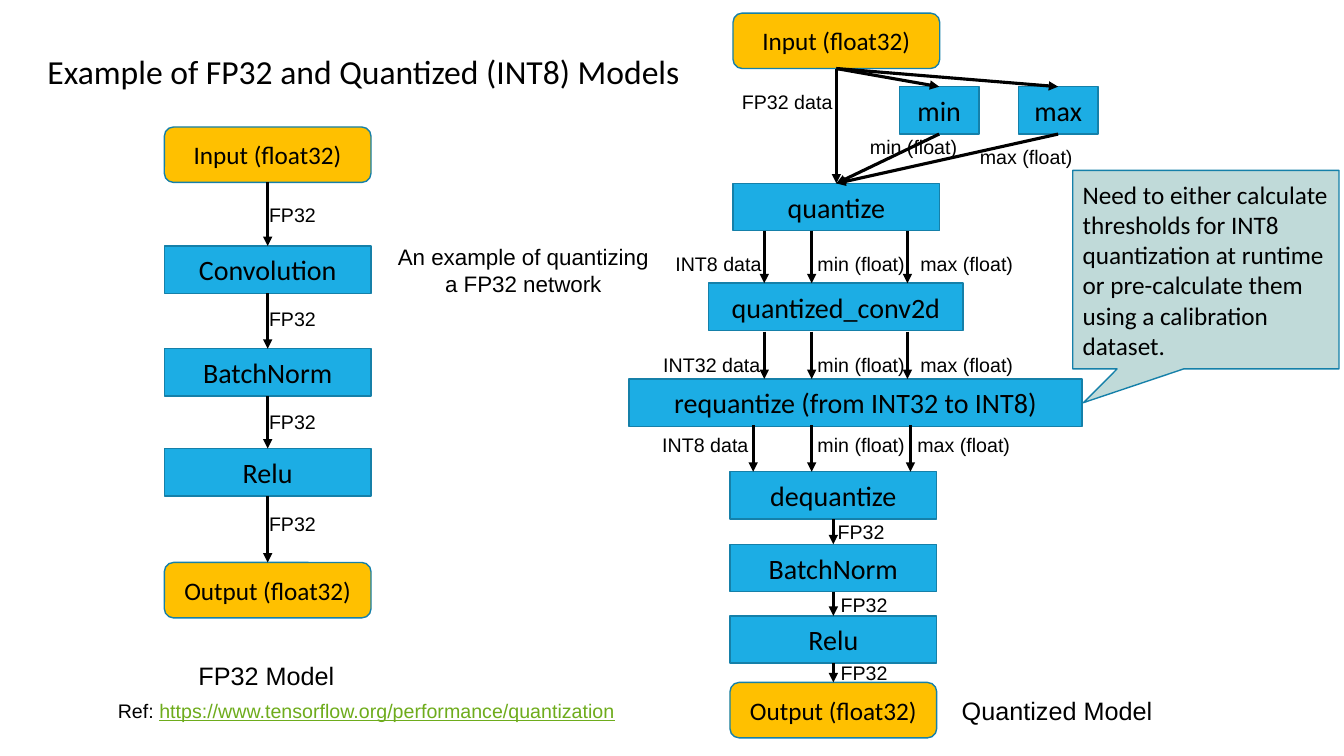
"""Build a slide comparing an FP32 model with its quantized INT8 version."""
import itertools

import pptx
import pptx.dml.color
import pptx.enum.shapes
import pptx.enum.text
import pptx.oxml
import pptx.oxml.ns
import pptx.util

Inches = pptx.util.Inches
RGBColor = pptx.dml.color.RGBColor
Shape = pptx.enum.shapes.MSO_SHAPE
Align = pptx.enum.text.PP_ALIGN
Anchor = pptx.enum.text.MSO_ANCHOR
AutoSize = pptx.enum.text.MSO_AUTO_SIZE

BLACK = RGBColor(0x00, 0x00, 0x00)
BLUE = RGBColor(0x1C, 0xAD, 0xE4)
AMBER = RGBColor(0xFF, 0xC0, 0x00)
TEAL = RGBColor(0xC0, 0xDA, 0xD9)
OUTLINE = RGBColor(0x15, 0x80, 0xA9)
LINK = RGBColor(0x6E, 0xAC, 0x1C)
TOP, BOTTOM = 0, 2


class Diagram:
    def __init__(self, slide):
        self.slide = slide
        self.shapes = slide.shapes

    def style(self, frame, size, font, align):
        for paragraph in frame.paragraphs:
            paragraph.alignment = align
            for run in paragraph.runs:
                run.font.size = pptx.util.Pt(size)
                run.font.name = font
                run.font.color.rgb = BLACK

    def title(self, text, left, top, width, height):
        title = self.shapes.title
        title.left, title.top = Inches(left), Inches(top)
        title.width, title.height = Inches(width), Inches(height)
        frame = title.text_frame
        frame.text = text
        frame.auto_size = AutoSize.NONE
        frame.vertical_anchor = Anchor.MIDDLE
        frame.paragraphs[0].line_spacing = 0.9
        self.style(frame, 24, "Calibri", Align.LEFT)

    def block(self, kind, text, left, top, width, height, fill, size, align=Align.CENTER):
        block = self.shapes.add_shape(
            kind, Inches(left), Inches(top), Inches(width), Inches(height))
        block.shadow.inherit = False
        block.fill.solid()
        block.fill.fore_color.rgb = fill
        block.line.color.rgb = OUTLINE
        block.line.width = pptx.util.Pt(1)
        frame = block.text_frame
        frame.text = text
        frame.word_wrap = True
        frame.vertical_anchor = Anchor.MIDDLE
        self.style(frame, size, "Calibri", align)
        return block

    def operation(self, text, left, top, width=2.05):
        return self.block(Shape.RECTANGLE, text, left, top, width, 0.47, BLUE, 20)

    def terminal(self, text, left, top):
        return self.block(Shape.ROUNDED_RECTANGLE, text, left, top, 2.05, 0.55, AMBER, 18)

    def callout(self, text, left, top, width, height, tip):
        callout = self.block(Shape.RECTANGULAR_CALLOUT, text, left, top, width, height,
                             TEAL, 18, Align.LEFT)
        callout.adjustments[0], callout.adjustments[1] = tip

    def arrow(self, x1=0, y1=0, x2=0, y2=0):
        arrow = self.shapes.add_connector(
            pptx.enum.shapes.MSO_CONNECTOR.STRAIGHT,
            Inches(x1), Inches(y1), Inches(x2), Inches(y2))
        arrow.line.color.rgb = BLACK
        arrow.line.width = pptx.util.Pt(2.25)
        line = arrow.line._get_or_add_ln()
        line.append(pptx.oxml.parse_xml(
            f'<a:tailEnd {pptx.oxml.ns.nsdecls("a")} type="triangle"/>'))
        arrow._element.spPr.append(pptx.oxml.parse_xml(
            f'<a:effectLst {pptx.oxml.ns.nsdecls("a")}/>'))
        return arrow

    def join(self, source, target):
        arrow = self.arrow()
        arrow.begin_connect(source, BOTTOM)
        arrow.end_connect(target, TOP)

    def chain(self, blocks):
        for source, target in itertools.pairwise(blocks):
            self.join(source, target)

    def label(self, text, left, top, width, height=0.34, size=14, wrap=False, align=Align.LEFT):
        label = self.shapes.add_textbox(
            Inches(left), Inches(top), Inches(width), Inches(height))
        frame = label.text_frame
        frame.text = text
        frame.word_wrap = wrap
        frame.auto_size = AutoSize.SHAPE_TO_FIT_TEXT
        self.style(frame, size, "Arial", align)
        return frame

    def reference(self, lead, address, left, top, width):
        frame = self.label(lead, left, top, width, wrap=True)
        run = frame.paragraphs[0].add_run()
        run.text = address
        self.style(frame, 14, "Arial", Align.LEFT)
        run.font.color.rgb = LINK
        run.font.underline = True


def draw_fp32_model(diagram):
    left = 1.63
    diagram.chain([
        diagram.terminal("Input (float32)", left, 1.26),
        diagram.operation("Convolution", left, 2.44),
        diagram.operation("BatchNorm", left, 3.46),
        diagram.operation("Relu", left, 4.45),
        diagram.terminal("Output (float32)", left, 5.58),
    ])
    for top in (1.96, 3, 4.02, 5.03):
        diagram.label("FP32", 2.57, top, 0.67)
    diagram.label("FP32 Model", 1.87, 6.5, 1.56, 0.4, 18)


def draw_quantized_model(diagram):
    source = diagram.terminal("Input (float32)", 7.27, 0.13)
    minimum = diagram.operation("min", 8.92, 0.86, 0.79)
    maximum = diagram.operation("max", 10.1, 0.86, 0.79)
    quantize = diagram.operation("quantize", 7.27, 1.82)
    diagram.operation("quantized_conv2d", 7.03, 2.81, 2.52)
    diagram.operation("requantize (from INT32 to INT8)", 6.24, 3.76, 4.49)

    diagram.chain([source, quantize])
    for extreme in (minimum, maximum):
        diagram.chain([source, extreme, quantize])
    diagram.chain([
        diagram.operation("dequantize", 7.24, 4.68),
        diagram.operation("BatchNorm", 7.24, 5.4),
        diagram.operation("Relu", 7.24, 6.11),
        diagram.terminal("Output (float32)", 7.24, 6.77),
    ])

    stages = [
        (2.29, 2.81, (7.58, 8.05, 9), "INT8 data", 6.6, 2.45, 9.03),
        (3.29, 3.76, (7.58, 8.05, 9), "INT32 data", 6.48, 3.45, 9.03),
        (4.22, 4.68, (7.47, 8.05, 9.03), "INT8 data", 6.47, 4.25, 9),
    ]
    for start, end, columns, data, data_left, top, max_left in stages:
        for x in columns:
            diagram.arrow(x, start, x, end)
        diagram.label(data, data_left, top, 1.17 if data == "INT32 data" else 1.06)
        diagram.label("min (float)", 8.01, top, 1.07)
        diagram.label("max (float)", max_left, top, 1.13)

    diagram.label("FP32 data", 7.26, 0.84, 1.11)
    diagram.label("min (float)", 8.53, 1.29, 1.07)
    diagram.label("max (float)", 9.62, 1.39, 1.13)
    for left, top in ((8.21, 5.11), (8.24, 5.83), (8.24, 6.51)):
        diagram.label("FP32", left, top, 0.67)
    diagram.label("Quantized Model", 9.44, 6.85, 2.11, 0.4, 18)


def main():
    deck = pptx.Presentation()
    deck.slide_width, deck.slide_height = Inches(13.33), Inches(7.5)
    diagram = Diagram(deck.slides.add_slide(deck.slide_layouts[5]))
    diagram.title("Example of FP32 and Quantized (INT8) Models", 0.37, 0.01, 6.58, 1.45)
    draw_fp32_model(diagram)
    draw_quantized_model(diagram)
    diagram.reference("Ref: ", "https://www.tensorflow.org/performance/quantization",
                      1.07, 6.88, 5.36)
    diagram.callout("Need to either calculate thresholds for INT8 quantization at runtime "
                    "or pre-calculate them using a calibration dataset.",
                    10.64, 1.69, 2.64, 1.97, (-0.46, 0.67))
    diagram.label("An example of quantizing a FP32 network", 3.79, 2.36, 2.8, 0.64, 16,
                  wrap=True, align=Align.CENTER)
    deck.save("out.pptx")


if __name__ == "__main__":
    main()
